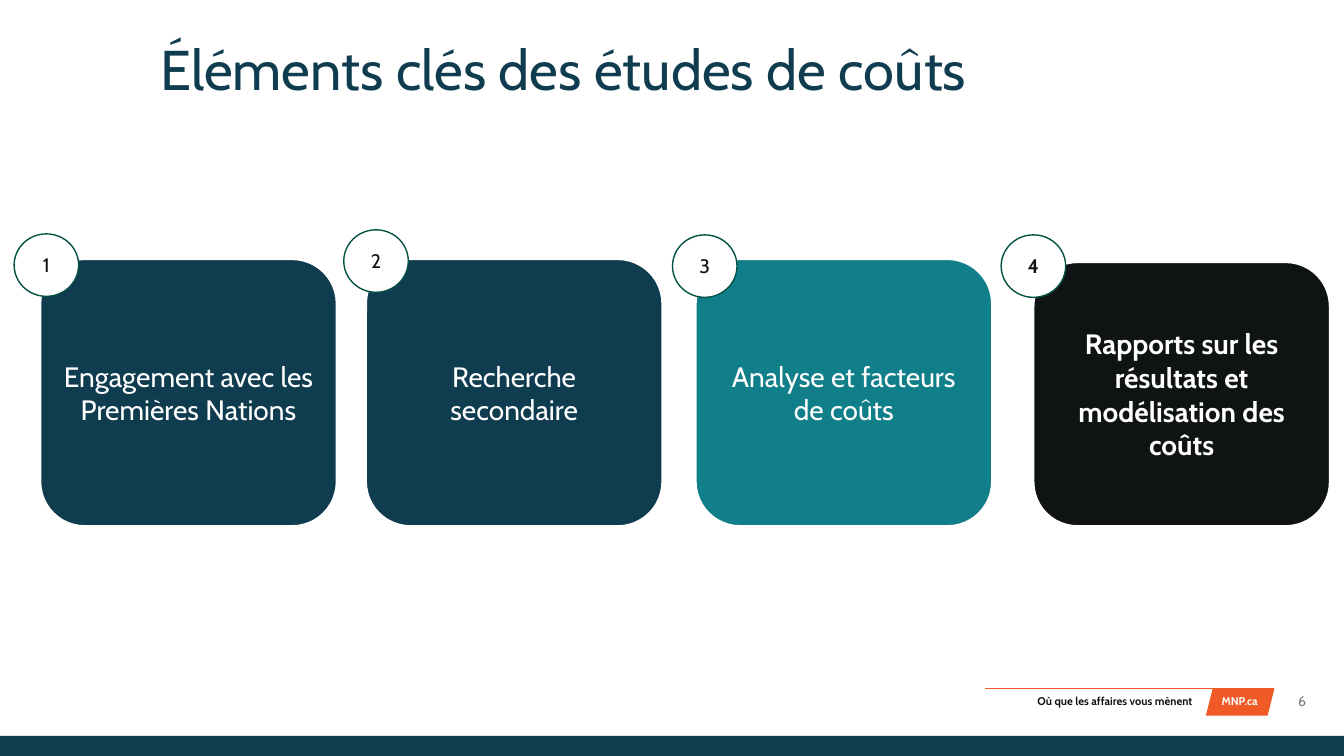
"""Build the slide on the four key elements of costing studies."""
from dataclasses import dataclass

from lxml.etree import SubElement
from pptx import Presentation
from pptx.dml.color import RGBColor
from pptx.enum.shapes import MSO_CONNECTOR, MSO_SHAPE
from pptx.enum.text import MSO_ANCHOR, PP_ALIGN
from pptx.oxml.ns import qn
from pptx.util import Inches, Pt

FONT = "Cabin"
NAVY, TEAL, BLACK, WHITE = "0F3C4F", "107F8A", "0F1313", "FFFFFF"
ORANGE, GREEN, GREY = "EF5A27", "035244", "797979"
CARD_WIDTH, CARD_BOTTOM = 2.94, 5.22
BADGE_WIDTH, BADGE_HEIGHT = 0.64, 0.62
FOOTER_INSETS = (0, 0.05, 0, 0.05)


@dataclass(frozen=True)
class Element:
    label: str
    fill: str
    left: float
    top: float
    badge_left: float
    badge_top: float
    bold: bool = False


ELEMENTS = [
    Element("Engagement avec les Premières Nations", NAVY, 0.4, 2.57, 0.14, 2.32),
    Element("Recherche secondaire", NAVY, 3.63, 2.57, 3.41, 2.28),
    Element("Analyse et facteurs de coûts", TEAL, 6.9, 2.57, 6.67, 2.33),
    Element("Rapports sur les résultats et modélisation des coûts", BLACK,
            10.25, 2.6, 9.93, 2.33, bold=True),
]


def rgb(value: str) -> RGBColor:
    return RGBColor.from_string(value)


def write(shape, text: str, *, size: float, color: str, bold: bool = False,
          align=PP_ALIGN.CENTER, anchor=MSO_ANCHOR.MIDDLE,
          insets=(0.1, 0.05, 0.1, 0.05), line_spacing=None) -> None:
    frame = shape.text_frame
    frame.word_wrap = True
    frame.vertical_anchor = anchor
    (frame.margin_left, frame.margin_top,
     frame.margin_right, frame.margin_bottom) = map(Inches, insets)
    paragraph = frame.paragraphs[0]
    paragraph.alignment = align
    paragraph.line_spacing = line_spacing
    run = paragraph.add_run()
    run.text = text
    run.font.name = FONT
    run.font.size = Pt(size)
    run.font.bold = bold
    run.font.color.rgb = rgb(color)


def add_text(slide, box: tuple, text: str, **text_format) -> None:
    write(slide.shapes.add_textbox(*map(Inches, box)), text, **text_format)


def add_block(slide, preset, box: tuple, fill: str, outline: str = "",
              outline_width: float = 1):
    block = slide.shapes.add_shape(preset, *map(Inches, box))
    block.shadow.inherit = False
    block.fill.solid()
    block.fill.fore_color.rgb = rgb(fill)
    if outline:
        block.line.color.rgb = rgb(outline)
        block.line.width = Pt(outline_width)
    else:
        block.line.fill.background()
    return block


def add_footer(slide) -> None:
    add_block(slide, MSO_SHAPE.PARALLELOGRAM, (11.96, 6.83, 0.68, 0.27), ORANGE)
    add_text(slide, (12, 6.84, 0.59, 0.24), "MNP.ca", size=8, color=WHITE,
             bold=True, anchor=MSO_ANCHOR.TOP, insets=FOOTER_INSETS)
    rule = slide.shapes.add_connector(
        MSO_CONNECTOR.STRAIGHT, *map(Inches, (9.77, 6.83, 12.64, 6.83)))
    rule.line.color.rgb = rgb(ORANGE)
    rule.line.width = Pt(1)
    SubElement(rule._element.spPr, qn("a:effectLst"))
    add_block(slide, MSO_SHAPE.RECTANGLE, (0, 7.3, 13.33, 0.2), NAVY)
    add_text(slide, (9.77, 6.84, 2.06, 0.24), "Où que les affaires vous mènent",
             size=8, color=BLACK, bold=True, align=PP_ALIGN.RIGHT,
             anchor=MSO_ANCHOR.TOP, insets=FOOTER_INSETS)
    add_text(slide, (12.64, 6.82, 0.55, 0.27), "6", size=10, color=GREY,
             insets=FOOTER_INSETS)


def add_element(slide, number: int, element: Element) -> None:
    card = add_block(
        slide, MSO_SHAPE.ROUNDED_RECTANGLE,
        (element.left, element.top, CARD_WIDTH, CARD_BOTTOM - element.top),
        element.fill, WHITE, 1.5)
    write(card, element.label, size=20, color=WHITE, bold=element.bold)
    badge = add_block(
        slide, MSO_SHAPE.OVAL,
        (element.badge_left, element.badge_top, BADGE_WIDTH, BADGE_HEIGHT),
        WHITE, GREEN)
    write(badge, str(number), size=14, color=BLACK, bold=element.bold)


def main() -> None:
    deck = Presentation()
    deck.slide_width, deck.slide_height = Inches(13.33), Inches(7.5)
    slide = deck.slides.add_slide(deck.slide_layouts[6])
    add_footer(slide)
    add_text(slide, (1.59, 0.42, 11.74, 0.61), "Éléments clés des études de coûts",
             size=40, color=NAVY, align=PP_ALIGN.LEFT, anchor=MSO_ANCHOR.TOP,
             insets=(0, 0, 0, 0), line_spacing=0.9)
    for number, element in enumerate(ELEMENTS, start=1):
        add_element(slide, number, element)
    deck.save("out.pptx")


if __name__ == "__main__":
    main()
